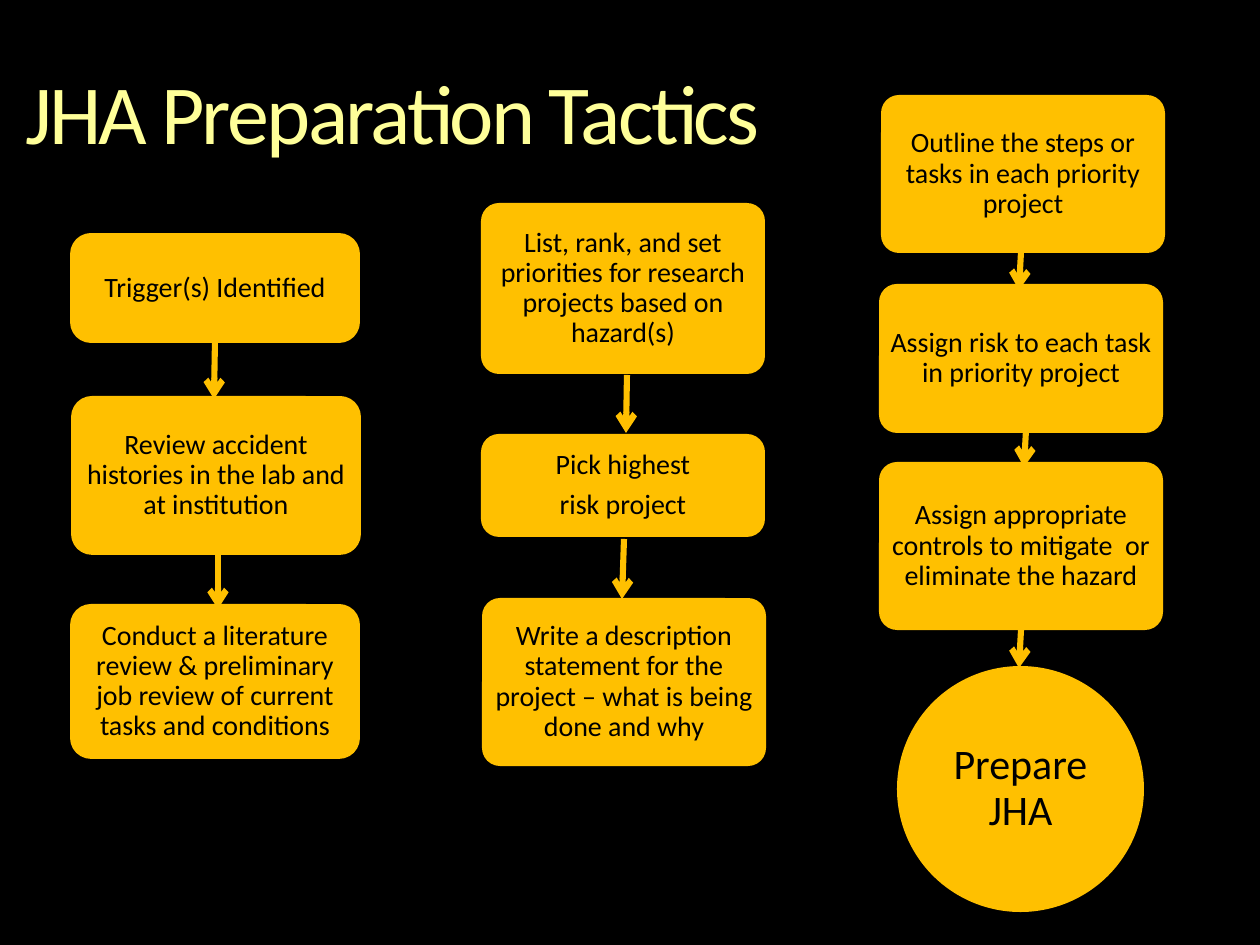
import pptx
import pptx.dml.color
import pptx.enum.shapes
import pptx.enum.text
import pptx.oxml
import pptx.oxml.ns
import pptx.util

PX = 914400 / 126
GOLD = "FFC000"


def px(length):
    return pptx.util.Emu(round(length * PX))


def color(hex_code):
    return pptx.dml.color.RGBColor.from_string(hex_code)


deck = pptx.Presentation()
deck.slide_width, deck.slide_height = px(1260), px(945)
page = deck.slides.add_slide(deck.slide_layouts[5])
page.background.fill.solid()
page.background.fill.fore_color.rgb = color("000000")

# Title
title = page.shapes.title
title.left, title.top, title.width, title.height = px(25), px(73), px(741), px(88)
frame = title.text_frame
frame.text = "JHA Preparation Tactics"
frame.word_wrap = True
frame.vertical_anchor = pptx.enum.text.MSO_ANCHOR.MIDDLE
frame.margin_left = frame.margin_right = frame.margin_top = frame.margin_bottom = 0
para = frame.paragraphs[0]
para.alignment = pptx.enum.text.PP_ALIGN.LEFT
para.line_spacing = 0.9
span = para.runs[0]
span.font.name = "Calibri"
span.font.size = pptx.util.Pt(48)
span.font.color.rgb = color("FFFF99")
span.font._element.set("spc", "-150")

# Each column: outline width in points, steps (left, top, width, height, text),
# arrows (start x, start y, end x, end y)
columns = [
    (3.35, [
        (73, 607, 284, 149, "Conduct a literature review & preliminary job review "
                            "of current tasks and conditions"),
        (74, 399, 284, 153, "Review accident histories in the lab and at institution"),
        (73, 236, 284, 104, "Trigger(s) Identified"),
    ], [(215, 340, 214, 399), (218, 551, 218, 609)]),
    (0, [
        (481, 203, 284, 171, "List, rank, and set priorities for research projects "
                             "based on hazard(s)"),
        (482, 598, 284, 168, "Write a description statement for the project – "
                             "what is being done and why"),
        (481, 434, 284, 103, "Pick highest\nrisk project"),
    ], [(627, 375, 626, 433), (624, 539, 622, 599)]),
    (0, [
        (897, 666, 247, 246, "Prepare JHA"),
        (879, 284, 284, 149, "Assign risk to each task in priority project"),
        (881, 95, 284, 158, "Outline the steps or tasks in each priority project"),
        (879, 462, 284, 168, "Assign appropriate controls to mitigate  or "
                             "eliminate the hazard"),
    ], [(1021, 252, 1019, 290), (1021, 630, 1019, 668), (1026, 431, 1024, 467)]),
]

for outline, steps, arrows in columns:
    # Step boxes, and the closing circle
    for left, top, width, height, text in steps:
        is_goal = text == "Prepare JHA"
        kind = pptx.enum.shapes.MSO_SHAPE.OVAL if is_goal else \
            pptx.enum.shapes.MSO_SHAPE.ROUNDED_RECTANGLE
        size, margin = (24, 10) if is_goal else (16, 6)
        box = page.shapes.add_shape(kind, px(left), px(top), px(width), px(height))
        if not is_goal:
            box.adjustments[0] = 18 / height
        box.shadow.inherit = False
        box.fill.solid()
        box.fill.fore_color.rgb = color(GOLD)
        if outline:
            box.line.color.rgb = color(GOLD)
            box.line.width = pptx.util.Pt(outline)
        else:
            box.line.fill.background()
        frame = box.text_frame
        frame.text = text
        frame.word_wrap = True
        frame.vertical_anchor = pptx.enum.text.MSO_ANCHOR.MIDDLE
        frame.margin_left = frame.margin_right = px(margin)
        frame.margin_top = frame.margin_bottom = px(margin)
        for para in frame.paragraphs:
            para.alignment = pptx.enum.text.PP_ALIGN.CENTER
            para.line_spacing = 0.9
            para.space_after = pptx.util.Pt(size * 0.35)
            for span in para.runs:
                span.font.name = "Calibri"
                span.font.size = pptx.util.Pt(size)
                span.font.color.rgb = color("000000")

    # Arrows between the steps
    for ends in arrows:
        arrow = page.shapes.add_connector(
            pptx.enum.shapes.MSO_CONNECTOR.STRAIGHT, *map(px, ends))
        arrow.line.color.rgb = color(GOLD)
        arrow.line.width = pptx.util.Pt(3.5)
        head = pptx.oxml.parse_xml(
            '<a:tailEnd %s type="arrow"/>' % pptx.oxml.ns.nsdecls("a"))
        arrow.line._get_or_add_ln().append(head)
        arrow._element.spPr.append(pptx.oxml.parse_xml(
            "<a:effectLst %s/>" % pptx.oxml.ns.nsdecls("a")))

deck.save("out.pptx")
